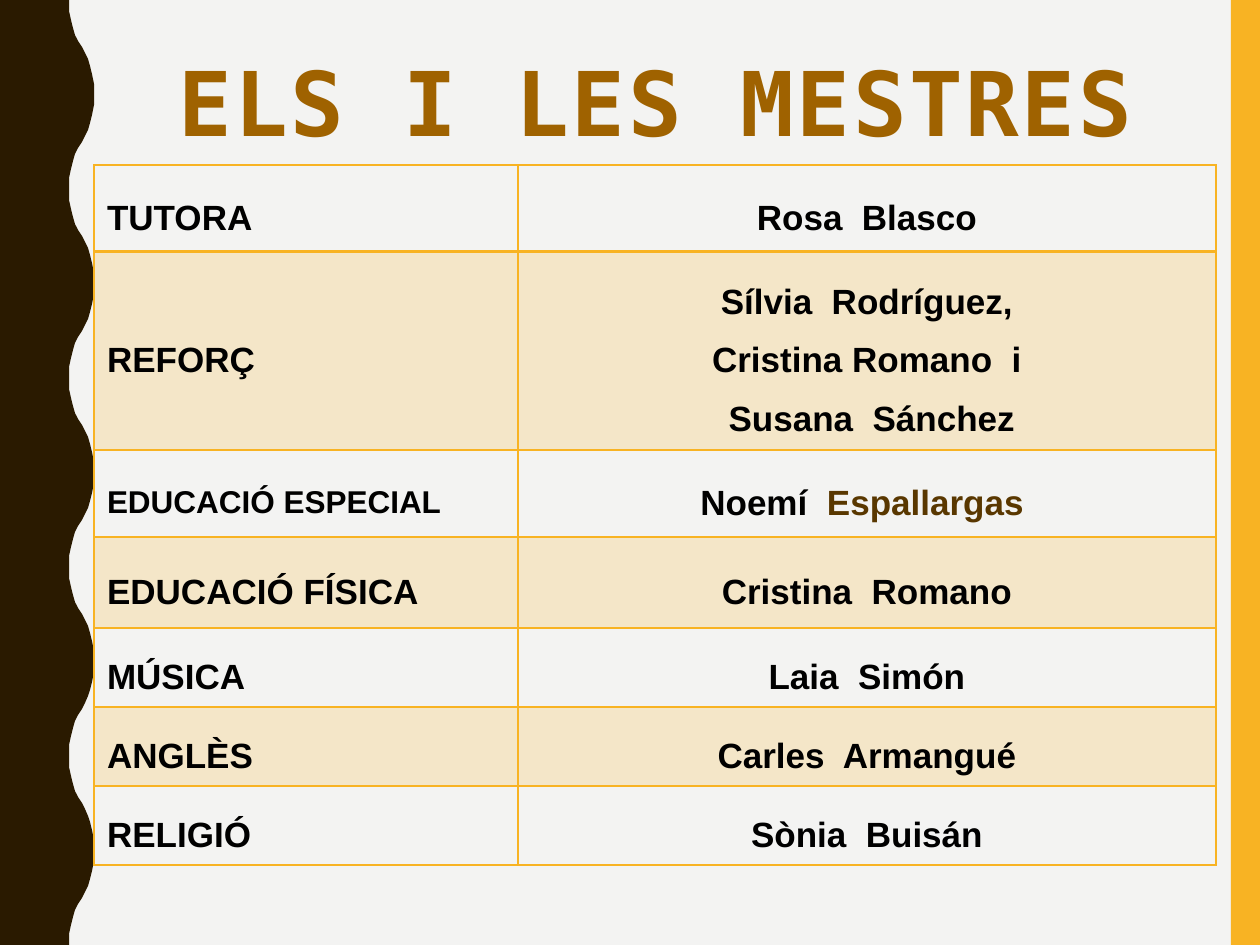
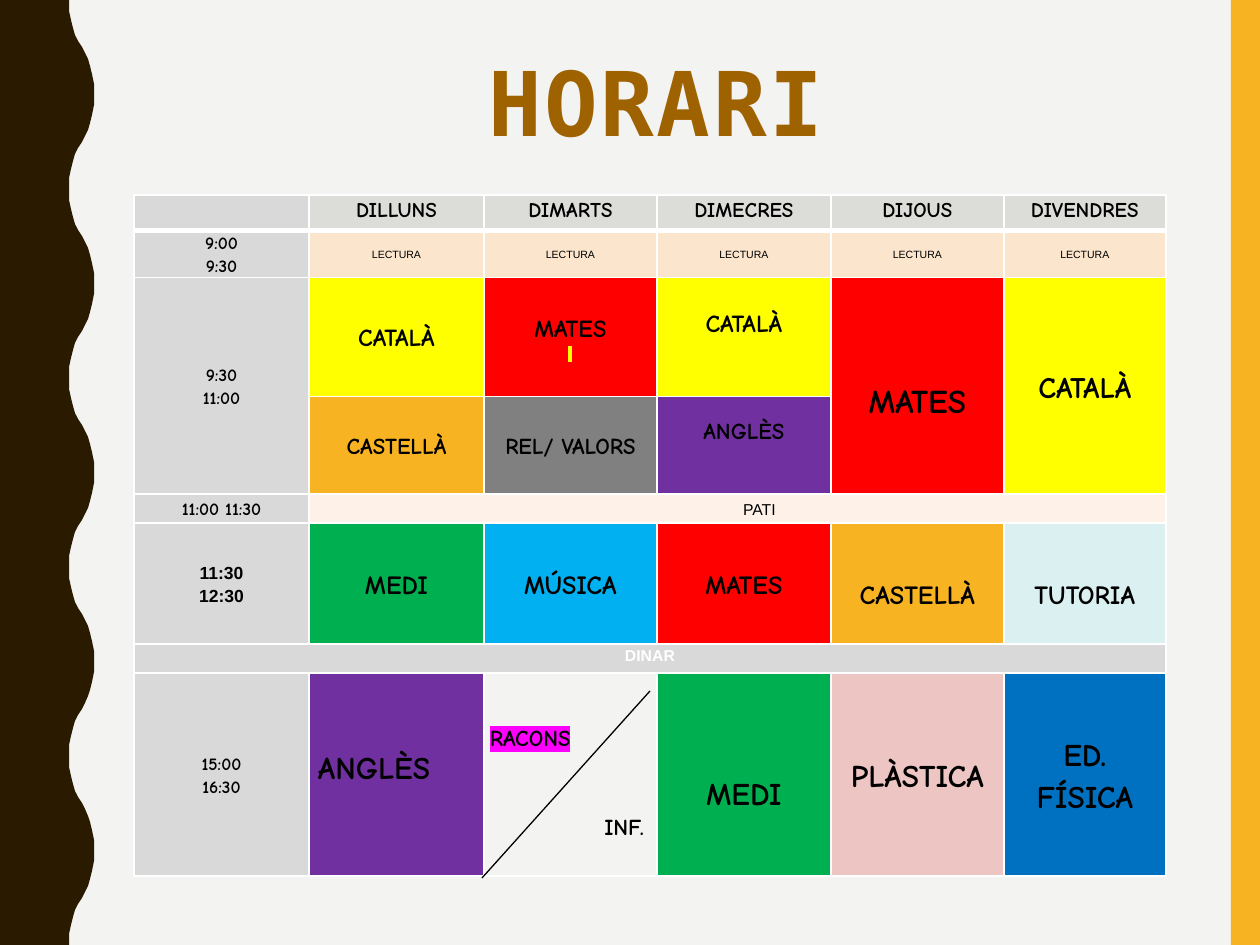
from pptx import Presentation
from pptx.dml.color import RGBColor
from pptx.enum.shapes import MSO_CONNECTOR, MSO_SHAPE
from pptx.enum.text import MSO_ANCHOR as ANCHOR, MSO_AUTO_SIZE, PP_ALIGN as ALIGN
from pptx.oxml.ns import qn
from pptx.util import Pt
from lxml.etree import SubElement

PX = 914400 / 126
WIDTH, HEIGHT = 1260, 945

COLORS = {
    "paper": "F3F3F2", "honey": "F8B323", "bark": "2A1A00", "title": "9F6200",
    "ink": "000000", "umber": "593700", "white": "FFFFFF", "hour": "D9D9D9",
    "day": "DCDCD9", "reading": "FCE5CD", "break": "FEF2E8", "yellow": "FFFF00",
    "red": "FF0000", "grey": "808080", "violet": "7030A0", "green": "00B050",
    "sky": "00B0F0", "mint": "DAF0F1", "rose": "EDC5C3", "blue": "0070C0",
    "magenta": "FF00FF",
}


def px(length):
    return round(length * PX)


def rgb(name):
    return RGBColor.from_string(COLORS[name])


def write(frame, lines, **base):
    for index, line in enumerate(lines):
        paragraph = frame.paragraphs[0] if index == 0 else frame.add_paragraph()
        for text, changes in [(line, {})] if isinstance(line, str) else line:
            fmt = {"size": 20, "font": "Arial", "color": "ink", "bold": True,
                   "align": ALIGN.CENTER, "spacing": 1.15, "before": 0} | base | changes
            paragraph.alignment = fmt["align"]
            paragraph.line_spacing = fmt["spacing"]
            paragraph.space_before = Pt(fmt["before"])
            run = paragraph.add_run()
            run.text = text
            run.font.size = Pt(fmt["size"])
            run.font.bold = fmt["bold"]
            run.font.color.rgb = rgb(fmt["color"])
            run.font.name = fmt["font"]
            props = run.font.fill._xPr
            if "tracking" in fmt:
                props.set("spc", str(fmt["tracking"]))
            if "highlight" in fmt:
                mark = SubElement(props, qn("a:highlight"))
                SubElement(mark, qn("a:srgbClr"), val=COLORS[fmt["highlight"]])
                props.find(qn("a:solidFill")).addnext(mark)


class Deck:
    def __init__(self):
        self.prs = Presentation()
        self.prs.slide_width, self.prs.slide_height = px(WIDTH), px(HEIGHT)
        background = self.prs.slide_master.background.fill
        background.solid()
        background.fore_color.rgb = rgb("paper")
        self.slide = None

    def paint(self, shape, color):
        shape.shadow.inherit = False
        shape.fill.solid()
        shape.fill.fore_color.rgb = rgb(color)
        shape.line.fill.background()

    def new_slide(self, title, title_height):
        self.slide = self.prs.slides.add_slide(self.prs.slide_layouts[5])
        self.band()
        self.wave()
        heading = self.slide.shapes.title
        heading.left, heading.top = px(130), px(53)
        heading.width, heading.height = px(1052), px(title_height)
        frame = heading.text_frame
        frame.word_wrap = True
        frame.auto_size = MSO_AUTO_SIZE.NONE
        frame.vertical_anchor = ANCHOR.TOP
        write(frame, [title], size=51, font="DejaVu Sans Mono", color="title",
              spacing=0.9, tracking=150)

    def band(self):
        stripe = self.slide.shapes.add_shape(
            MSO_SHAPE.RECTANGLE, px(1231), 0, px(29), px(HEIGHT))
        self.paint(stripe, "honey")

    def wave(self, trough=69, crest=94, halves=10, steps=12):
        outline = []
        for half in range(halves):
            start, end = (crest, trough) if half % 2 else (trough, crest)
            for step in range(1, steps + 1):
                t = step / steps
                x = start + (end - start) * (3 * t ** 2 - 2 * t ** 3)
                y = half + 1.5 * t * (1 - t) + t ** 3
                outline.append((x, y * HEIGHT / halves))
        builder = self.slide.shapes.build_freeform(0, 0, scale=PX)
        builder.add_line_segments([(trough, 0), *outline, (0, HEIGHT)], close=True)
        self.paint(builder.convert_to_shape(), "bark")

    def table(self, left, top, columns, rows):
        grid = self.slide.shapes.add_table(
            len(rows), len(columns), px(left), px(top),
            px(sum(columns)), px(sum(rows))).table
        grid.first_row = grid.horz_banding = False
        for column, width in zip(grid.columns, columns):
            column.width = px(width)
        for row, height in zip(grid.rows, rows):
            row.height = px(height)
        return grid

    def cell(self, cell, lines, fill=None, alpha=None, edge="honey", edges=None,
             anchor=ANCHOR.MIDDLE, margins=(13, 6, 13, 6), shift=0, **fmt):
        left, top, right, bottom = margins
        cell.margin_left, cell.margin_right = px(left), px(right)
        cell.margin_top = px(top + max(0, 2 * shift))
        cell.margin_bottom = px(bottom + max(0, -2 * shift))
        cell.vertical_anchor = anchor
        write(cell.text_frame, lines, **fmt)
        props = cell._tc.get_or_add_tcPr()
        if fill:
            cell.fill.solid()
            cell.fill.fore_color.rgb = rgb(fill)
            if alpha:
                tint = props.find(qn("a:solidFill")).find(qn("a:srgbClr"))
                SubElement(tint, qn("a:alpha"), val=str(alpha * 1000))
        else:
            cell.fill.background()
        for position, side in enumerate("LRTB"):
            width = (edges or {}).get(side, 1)
            border = SubElement(props, qn(f"a:ln{side}"), w=str(Pt(width)))
            solid = SubElement(border, qn("a:solidFill"))
            SubElement(solid, qn("a:srgbClr"), val=COLORS[edge])
            props.insert(position, border)

    def line(self, start, end, color, width):
        stroke = self.slide.shapes.add_connector(
            MSO_CONNECTOR.STRAIGHT, *map(px, start + end))
        stroke.line.color.rgb = rgb(color)
        stroke.line.width = Pt(width)
        SubElement(stroke._element.spPr, qn("a:effectLst"))


TEACHERS = [
    ("TUTORA", ["Rosa  Blasco"]),
    ("REFORÇ", ["Sílvia  Rodríguez,", "Cristina Romano  i", " Susana  Sánchez"]),
    ("EDUCACIÓ ESPECIAL", [[("Noemí  ", {}), ("Espallargas ", {"color": "umber"})]]),
    ("EDUCACIÓ FÍSICA", ["Cristina  Romano"]),
    ("MÚSICA", ["Laia  Simón"]),
    ("ANGLÈS", ["Carles  Armangué"]),
    ("RELIGIÓ", ["Sònia  Buisán"]),
]

DAYS = ["DILLUNS", "DIMARTS", "DIMECRES", "DIJOUS", "DIVENDRES"]


def lesson(text, fill, size, **options):
    return [text], {"fill": fill, "size": size} | options


def hour(*times, **options):
    return list(times), {"fill": "hour", "size": 10} | options


COVERED = ([""], {"size": 6})
HEADER = {"size": 12, "anchor": ANCHOR.TOP, "edges": {"B": 3}}
MATES_MARKED = ["MATES", [("\u00a0", {"size": 8, "font": "Arial", "bold": False,
                                      "highlight": "yellow"})]]
CORNERS = [[("RACONS", {"align": ALIGN.LEFT, "highlight": "magenta"})],
           [("INF.", {"align": ALIGN.RIGHT, "before": 34})]]

TIMETABLE = [
    [([""], HEADER | {"fill": "hour"})]
    + [([day], HEADER | {"fill": "day"}) for day in DAYS],
    [hour("9:00", "9:30", anchor=ANCHOR.TOP)]
    + [lesson("LECTURA", "reading", 6, font="Arial", bold=False) for _ in DAYS],
    [hour("9:30", "11:00"),
     lesson("CATALÀ", "yellow", 14),
     (MATES_MARKED, {"fill": "red", "size": 14}),
     lesson("CATALÀ", "yellow", 14, shift=-14),
     lesson("MATES", "red", 19, shift=14),
     lesson("CATALÀ", "yellow", 17)],
    [COVERED,
     lesson("CASTELLÀ", "honey", 13),
     lesson("REL/ VALORS", "grey", 13),
     lesson("ANGLÈS", "violet", 13, shift=-15),
     COVERED, COVERED],
    [hour("11:00 11:30"),
     lesson("PATI", "break", 9, font="Arial", bold=False, margins=(50, 0, 6, 0))]
    + [COVERED] * 4,
    [hour("11:30", "12:30", font="Arial"),
     lesson("MEDI", "green", 15),
     lesson("MÚSICA", "sky", 15),
     lesson("MATES", "red", 15),
     lesson("CASTELLÀ", "honey", 15, shift=10),
     lesson("TUTORIA", "mint", 15, shift=10)],
    [lesson("DINAR", "hour", 9, font="Arial", color="white", anchor=ANCHOR.TOP)]
    + [COVERED] * 5,
    [hour("15:00", "16:30"),
     lesson("ANGLÈS", "violet", 18, align=ALIGN.LEFT, margins=(9, 0, 6, 0), shift=-8),
     (CORNERS, {"size": 13, "margins": (6, 0, 13, 0), "shift": 7}),
     lesson("MEDI", "green", 18, shift=18),
     lesson("PLÀSTICA", "rose", 18),
     lesson("ED. FÍSICA", "blue", 18)],
]

MERGES = [((2, 0), (3, 0)), ((2, 4), (3, 4)), ((2, 5), (3, 5)),
          ((4, 1), (4, 5)), ((6, 0), (6, 5))]


def teachers_slide(deck):
    deck.new_slide("ELS I LES MESTRES", 112)
    staff = deck.table(94, 165, [424, 698], [87, 198, 87, 91, 79, 79, 79])
    for row, (role, names) in enumerate(TEACHERS):
        look = {"fill": "honey", "alpha": 20} if row % 2 else {}
        look |= {"spacing": 1.5, "edges": {"B": 2} if row == 0 else None}
        role_size = 18 if role == "EDUCACIÓ ESPECIAL" else 20
        deck.cell(staff.cell(row, 0), [role], align=ALIGN.LEFT, size=role_size, **look)
        deck.cell(staff.cell(row, 1), names, **look)


def timetable_slide(deck):
    deck.new_slide("HORARI", 205)
    week = deck.table(134, 195, [175, 175, 173, 174, 173, 162],
                      [31, 47, 119, 98, 29, 121, 29, 203])
    for first, last in MERGES:
        week.cell(*first).merge(week.cell(*last))
    shared = {"font": "Comic Neue", "edge": "white", "margins": (6, 0, 6, 0)}
    for row, slots in enumerate(TIMETABLE):
        for column, (lines, options) in enumerate(slots):
            deck.cell(week.cell(row, column), lines, **(shared | options))
    deck.line((482, 878), (650, 691), "ink", 0.75)


def main():
    deck = Deck()
    teachers_slide(deck)
    timetable_slide(deck)
    deck.prs.save("out.pptx")


if __name__ == "__main__":
    main()
